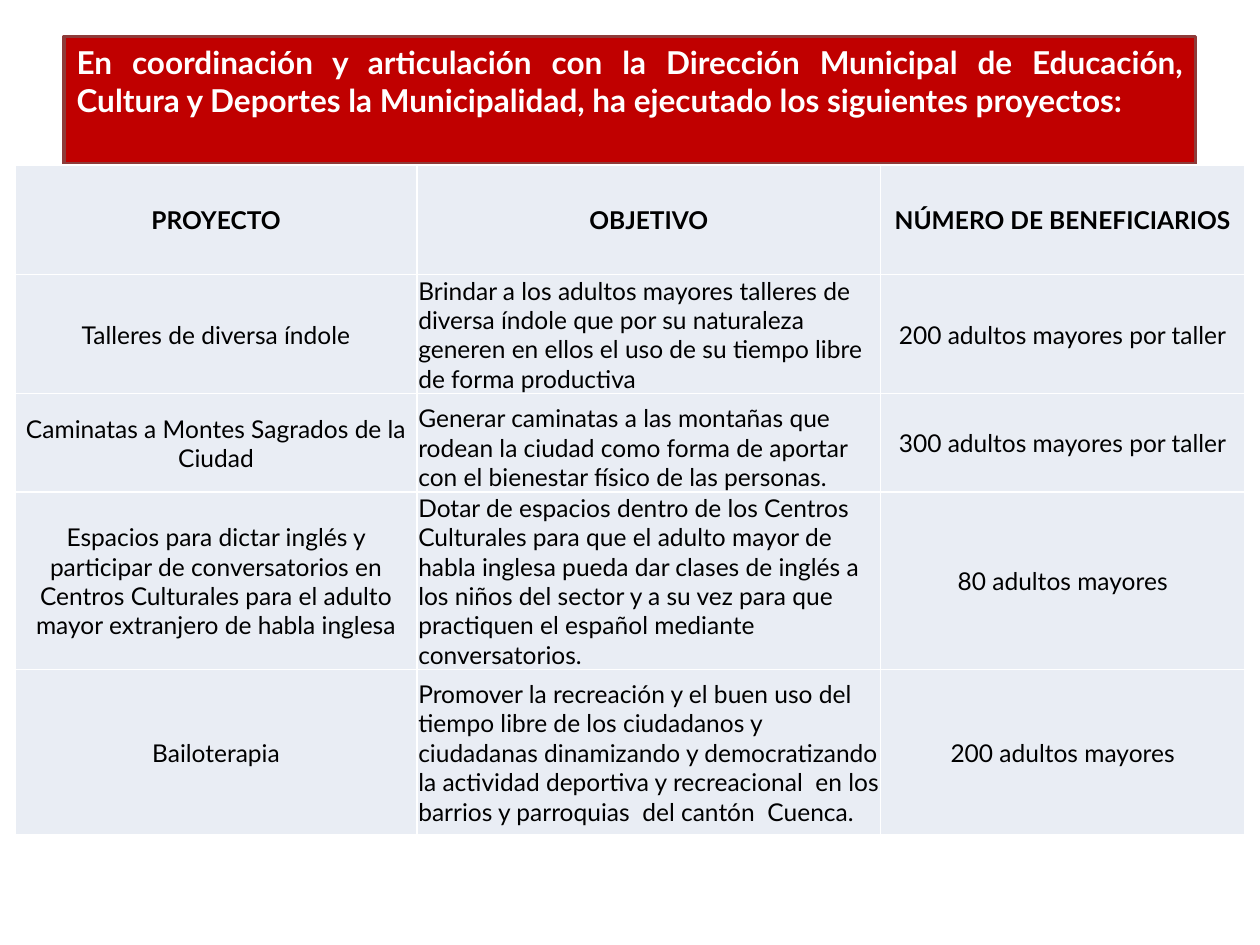
"""Build the slide listing the municipal projects for older adults."""
from lxml import etree
from pptx import Presentation
from pptx.dml.color import RGBColor
from pptx.enum.shapes import MSO_SHAPE
from pptx.enum.text import MSO_ANCHOR, PP_ALIGN
from pptx.oxml.ns import qn
from pptx.util import Inches, Pt

RECTANGLE = MSO_SHAPE.RECTANGLE
TOP, MIDDLE, BOTTOM = MSO_ANCHOR.TOP, MSO_ANCHOR.MIDDLE, MSO_ANCHOR.BOTTOM
LEFT, CENTER, JUSTIFY = PP_ALIGN.LEFT, PP_ALIGN.CENTER, PP_ALIGN.JUSTIFY

FONT = "Lato"
COLORS = {
    "banner": "C00000",
    "banner_line": "8E3B39",
    "cell": "E9EDF4",
    "border": "FFFFFF",
    "title": "FFFFFF",
    "text": "000000",
}
TITLE = (
    "En coordinación y articulación con la Dirección Municipal de Educación, "
    "Cultura y Deportes la Municipalidad, ha ejecutado los siguientes proyectos:"
)
COLUMN_WIDTHS = [3.19, 3.68, 2.89]
ROW_HEIGHTS = [0.87, 0.94, 0.78, 1.31, 1.31]
ROWS = [
    ("PROYECTO", "OBJETIVO", "NÚMERO DE BENEFICIARIOS"),
    (
        "Talleres de diversa índole",
        "Brindar a los adultos mayores talleres de diversa índole que por su "
        "naturaleza generen en ellos el uso de su tiempo libre de forma productiva",
        "200 adultos mayores por taller",
    ),
    (
        "Caminatas a Montes Sagrados de la Ciudad",
        "Generar caminatas a las montañas que rodean la ciudad como forma de "
        "aportar con el bienestar físico de las personas.",
        "300 adultos mayores por taller",
    ),
    (
        "Espacios para dictar inglés y participar de conversatorios en Centros "
        "Culturales para el adulto mayor extranjero de habla inglesa",
        "Dotar de espacios dentro de los Centros Culturales para que el adulto "
        "mayor de habla inglesa pueda dar clases de inglés a los niños del sector "
        "y a su vez para que practiquen el español mediante conversatorios.",
        "80 adultos mayores",
    ),
    (
        "Bailoterapia",
        "Promover la recreación y el buen uso del tiempo libre de los ciudadanos "
        "y ciudadanas dinamizando y democratizando la actividad deportiva y "
        "recreacional  en los barrios y parroquias  del cantón  Cuenca.",
        "200 adultos mayores",
    ),
]
BOTTOM_ROWS = (1, 2)


def write(frame, text, size, color, bold, align):
    frame.text = text
    para = frame.paragraphs[0]
    para.alignment = align
    para.font.name = FONT
    para.font.size = Pt(size)
    para.font.bold = bold
    para.font.color.rgb = RGBColor.from_string(COLORS[color])


def add_borders(cell):
    properties = cell._tc.get_or_add_tcPr()
    for index, side in enumerate(("lnL", "lnR", "lnT", "lnB")):
        line = etree.Element(qn(f"a:{side}"), w=str(Pt(1)))
        fill = etree.SubElement(line, qn("a:solidFill"))
        etree.SubElement(fill, qn("a:srgbClr"), val=COLORS["border"])
        properties.insert(index, line)


deck = Presentation()
deck.slide_width, deck.slide_height = Inches(10), Inches(7.5)
page = deck.slides.add_slide(deck.slide_layouts[6])

banner = page.shapes.add_shape(
    RECTANGLE, Inches(0.51), Inches(0.29), Inches(8.98), Inches(1.01)
)
banner.shadow.inherit = False
banner.fill.solid()
banner.fill.fore_color.rgb = RGBColor.from_string(COLORS["banner"])
banner.line.color.rgb = RGBColor.from_string(COLORS["banner_line"])
banner.line.width = Pt(2)
banner.text_frame.word_wrap = True
banner.text_frame.vertical_anchor = TOP
write(banner.text_frame, TITLE, 18, "title", True, JUSTIFY)

table = page.shapes.add_table(
    len(ROWS), len(COLUMN_WIDTHS), Inches(0.12), Inches(1.31),
    Inches(sum(COLUMN_WIDTHS)), Inches(sum(ROW_HEIGHTS)),
).table
for column, width in zip(table.columns, COLUMN_WIDTHS):
    column.width = Inches(width)
for row, height in zip(table.rows, ROW_HEIGHTS):
    row.height = Inches(height)

for row_index, texts in enumerate(ROWS):
    is_header = row_index == 0
    for column_index, text in enumerate(texts):
        is_goal = column_index == 1 and not is_header
        cell = table.cell(row_index, column_index)
        cell.margin_left = cell.margin_top = cell.margin_right = Inches(0.01)
        cell.margin_bottom = 0
        cell.vertical_anchor = BOTTOM if is_goal and row_index in BOTTOM_ROWS else MIDDLE
        cell.fill.solid()
        cell.fill.fore_color.rgb = RGBColor.from_string(COLORS["cell"])
        add_borders(cell)
        write(cell.text_frame, text, 14, "text", is_header, LEFT if is_goal else CENTER)

deck.save("out.pptx")
